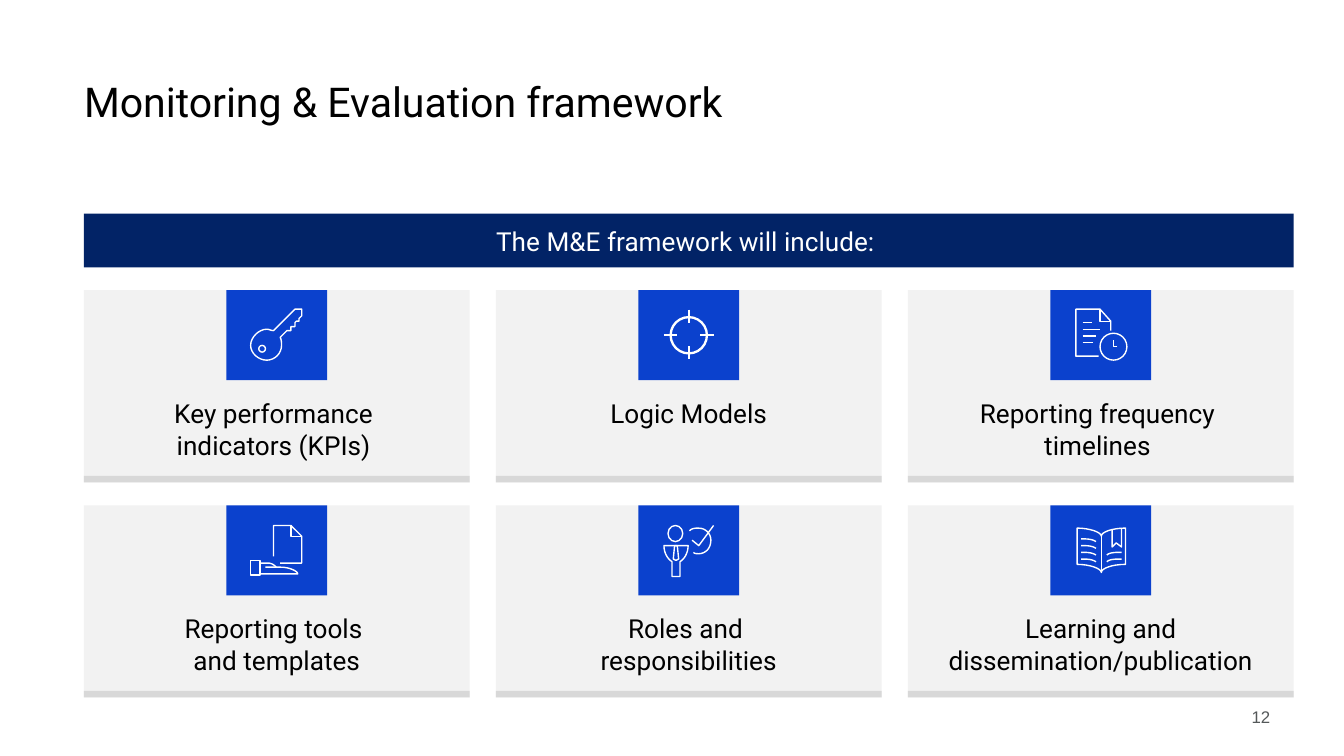
from pptx import Presentation
from pptx.dml.color import RGBColor
from pptx.enum.shapes import MSO_CONNECTOR, MSO_SHAPE
from pptx.enum.text import MSO_ANCHOR, MSO_AUTO_SIZE, PP_ALIGN
from pptx.oxml.ns import qn
from pptx.util import Inches, Pt

RECT, OVAL = MSO_SHAPE.RECTANGLE, MSO_SHAPE.OVAL
STRAIGHT = MSO_CONNECTOR.STRAIGHT
TOP, MIDDLE = MSO_ANCHOR.TOP, MSO_ANCHOR.MIDDLE
LEFT, CENTER, RIGHT = PP_ALIGN.LEFT, PP_ALIGN.CENTER, PP_ALIGN.RIGHT

BLACK = RGBColor(0x00, 0x00, 0x00)
WHITE = RGBColor(0xFF, 0xFF, 0xFF)
NAVY = RGBColor(0x02, 0x23, 0x66)
BLUE = RGBColor(0x0B, 0x41, 0xCD)
CARD_GRAY = RGBColor(0xF2, 0xF2, 0xF2)
EDGE_GRAY = RGBColor(0xD8, 0xD8, 0xD8)
NUMBER_GRAY = RGBColor(0x54, 0x58, 0x59)

# Slide and card grid, in inches
SLIDE_W = 10
SLIDE_H = SLIDE_W * 9 / 16
GRID_X, GRID_Y, GRID_W = SLIDE_W / 16, 2.16, 9
CARD_W, CARD_H, ROW_PITCH = 2.87, 1.43, 1.6
COLUMNS = 3
COL_PITCH = (GRID_W - CARD_W) / (COLUMNS - 1)
TILE_W, TILE_H, EDGE_H = 0.75, 0.67, 0.05

# Icons, in hundredths of an inch from the tile corner. A path point is (x, y),
# or six numbers for a Bezier curve: two control points and the end.
KEY = {
    "ovals": [(24, 41, 5, 5)],
    "paths": [[(51, 14), (35, 30), (33, 30, 32, 29, 30, 29), (24, 29, 18, 35, 18, 41),
               (18, 47, 24, 52, 30, 52), (36, 52, 41, 47, 41, 41), (41, 39, 41, 37, 40, 35),
               (45, 30), (48, 30), (48, 27), (51, 27), (51, 24), (52, 23), (54, 23),
               (54, 21), (56, 19), (56, 14), (51, 14)]],
}
TARGET = {
    "weight": 1.25,
    "ovals": [(24, 20, 27, 27)],
    "paths": [[(37.5, 14.5), (37.5, 24.5)], [(37.5, 41.5), (37.5, 51.5)],
              [(19, 33.5), (29, 33.5)], [(46, 33.5), (56, 33.5)]],
}
TIMELINE = {
    "ovals": [(37, 32, 20, 20)],
    "paths": [[(24, 24 + 5 * i), (end, 24 + 5 * i)] for i, end in enumerate((31, 37, 34, 32))]
    + [[(50, 42), (47, 42), (47, 37)],
       [(36, 49), (19, 49), (19, 14), (37, 14), (45, 23), (45, 30)],
       [(37, 14), (37, 23), (45, 23)]],
}
HAND = {
    "rects": [(18, 41, 7, 11)],
    "paths": [[(40, 43), (56, 43), (56, 23), (48, 15), (35, 15), (35, 38)],
              [(48, 15), (48, 23), (56, 23)],
              [(25, 51), (53, 51), (53, 49, 47, 46, 40, 46), (29, 46)],
              [(25, 43), (31, 43), (34, 43, 36, 45, 37, 46)]],
}
PERSON = {
    "ovals": [(22, 15, 11, 12)],
    "paths": [[(37, 30), (19, 30), (19, 36, 22, 40, 25, 42), (25, 53), (31, 53), (31, 42),
               (34, 40, 37, 36, 37, 30)],
              [(29, 30), (27, 30), (26, 40), (28, 41), (30, 40), (29, 30)],
              [(38, 19), (40, 17, 42, 17, 45, 17), (50, 17, 54, 21, 54, 26),
               (54, 32, 50, 36, 45, 36), (43, 36, 42, 36, 41, 35)],
              [(56, 15), (45, 30), (40, 26)]],
}
BOOK = {
    "paths": [[(38, 23), (38, 20, 46, 17, 56, 17), (56, 44), (46, 44, 38, 47, 38, 50),
               (38, 47, 29, 44, 20, 44), (20, 17), (29, 17, 38, 20, 38, 23)],
              [(38, 23), (38, 50)],
              [(53, 17), (53, 31), (49, 28), (46, 31), (46, 18)]]
    + [[(34, y), (31, y - 2, 27, y - 2, 23, y - 2)] for y in (27, 32, 37, 42)]
    + [[(42, y), (44, y - 2, 49, y - 2, 53, y - 2)] for y in (37, 42)],
}

CARDS = [
    ("Key performance \nindicators (KPIs) ", KEY),
    ("Logic Models", TARGET),
    ("Reporting frequency \ntimelines ", TIMELINE),
    ("Reporting tools \nand templates", HAND),
    ("Roles and \nresponsibilities", PERSON),
    ("Learning and dissemination/publication", BOOK),
]


def set_text(sp, text, size, color, align, anchor=TOP, margins=(0.1, 0.05, 0.1, 0.05),
             font="Roboto"):
    tf = sp.text_frame
    tf.text = text
    left, top, right, bottom = map(Inches, margins)
    frame = {"word_wrap": True, "auto_size": MSO_AUTO_SIZE.NONE, "vertical_anchor": anchor,
             "margin_left": left, "margin_top": top,
             "margin_right": right, "margin_bottom": bottom}
    for name, value in frame.items():
        setattr(tf, name, value)
    for p in tf.paragraphs:
        p.alignment = align
        for r in p.runs:
            for name, value in {"name": font, "size": Pt(size), "bold": False}.items():
                setattr(r.font, name, value)
            r.font.color.rgb = color


def add_block(s, box, fill):
    sp = s.shapes.add_shape(RECT, *map(Inches, box))
    sp.shadow.inherit = False
    sp.fill.solid()
    sp.fill.fore_color.rgb = fill
    sp.line.fill.background()
    return sp


def set_stroke(sp, weight):
    sp.line.color.rgb = WHITE
    sp.line.width = Pt(weight)


def add_outline(s, kind, box, weight):
    sp = s.shapes.add_shape(kind, *map(Inches, box))
    sp.shadow.inherit = False
    sp.fill.background()
    set_stroke(sp, weight)


def flatten(path, steps=8):
    """Turn the curves of a path into short straight pieces."""
    points = []
    for node in path:
        if len(node) == 2:
            points.append(node)
            continue
        x0, y0 = points[-1]
        x1, y1, x2, y2, x3, y3 = node
        for i in range(1, steps + 1):
            t = i / steps
            a, b, c, d = (1 - t) ** 3, 3 * t * (1 - t) ** 2, 3 * t * t * (1 - t), t ** 3
            points.append((a * x0 + b * x1 + c * x2 + d * x3,
                           a * y0 + b * y1 + c * y2 + d * y3))
    return points


def add_path(s, x, y, path, weight):
    points = [(Inches(x + px / 100), Inches(y + py / 100)) for px, py in flatten(path)]
    if len(points) == 2:
        sp = s.shapes.add_connector(STRAIGHT, *points[0], *points[1])
        set_stroke(sp, weight)
        sp._element.spPr.append(sp._element.makeelement(qn("a:effectLst"), {}))
        return
    closed = points[0] == points[-1]
    builder = s.shapes.build_freeform(*points[0])
    builder.add_line_segments(points[1:], close=closed)
    sp = builder.convert_to_shape()
    sp.shadow.inherit = False
    sp.fill.background()
    set_stroke(sp, weight)


def add_icon(s, x, y, icon):
    weight = icon.get("weight", 0.75)
    for name, kind in (("ovals", OVAL), ("rects", RECT)):
        for left, top, w, h in icon.get(name, []):
            add_outline(s, kind, (x + left / 100, y + top / 100, w / 100, h / 100), weight)
    for path in icon["paths"]:
        add_path(s, x, y, path, weight)


def add_card(s, x, y, text, icon):
    card = add_block(s, (x, y, CARD_W, CARD_H), CARD_GRAY)
    set_text(card, text, 14, BLACK, CENTER, margins=(0.2, 0.8, 0.2, 0.1))
    add_block(s, (x, y + CARD_H - EDGE_H, CARD_W, EDGE_H), EDGE_GRAY)
    tile_x = x + (CARD_W - TILE_W) / 2
    add_block(s, (tile_x, y, TILE_W, TILE_H), BLUE)
    add_icon(s, tile_x, y, icon)


def main():
    prs = Presentation()
    prs.slide_width, prs.slide_height = Inches(SLIDE_W), Inches(SLIDE_H)
    s = prs.slides.add_slide(prs.slide_layouts[5])

    # Title
    title = s.shapes.title
    title.left, title.top, title.width, title.height = map(Inches, (GRID_X, 0.47, 8.13, 0.63))
    set_text(title, "Monitoring & Evaluation framework", 22, BLACK, LEFT,
             margins=(0, 0.1, 0.1, 0.1))

    # Banner
    banner = add_block(s, (GRID_X, 1.59, GRID_W, 0.4), NAVY)
    set_text(banner, "The M&E framework will include: ", 14, WHITE, CENTER, MIDDLE)

    # Cards
    for i, (text, icon) in enumerate(CARDS):
        row, col = divmod(i, COLUMNS)
        add_card(s, GRID_X + col * COL_PITCH, GRID_Y + row * ROW_PITCH, text, icon)

    # Slide number
    number = s.shapes.add_textbox(*map(Inches, (9.02, 5.21, 0.53, 0.18)))
    set_text(number, "12", 9, NUMBER_GRAY, RIGHT, font="Arial")

    prs.save("out.pptx")


if __name__ == "__main__":
    main()
